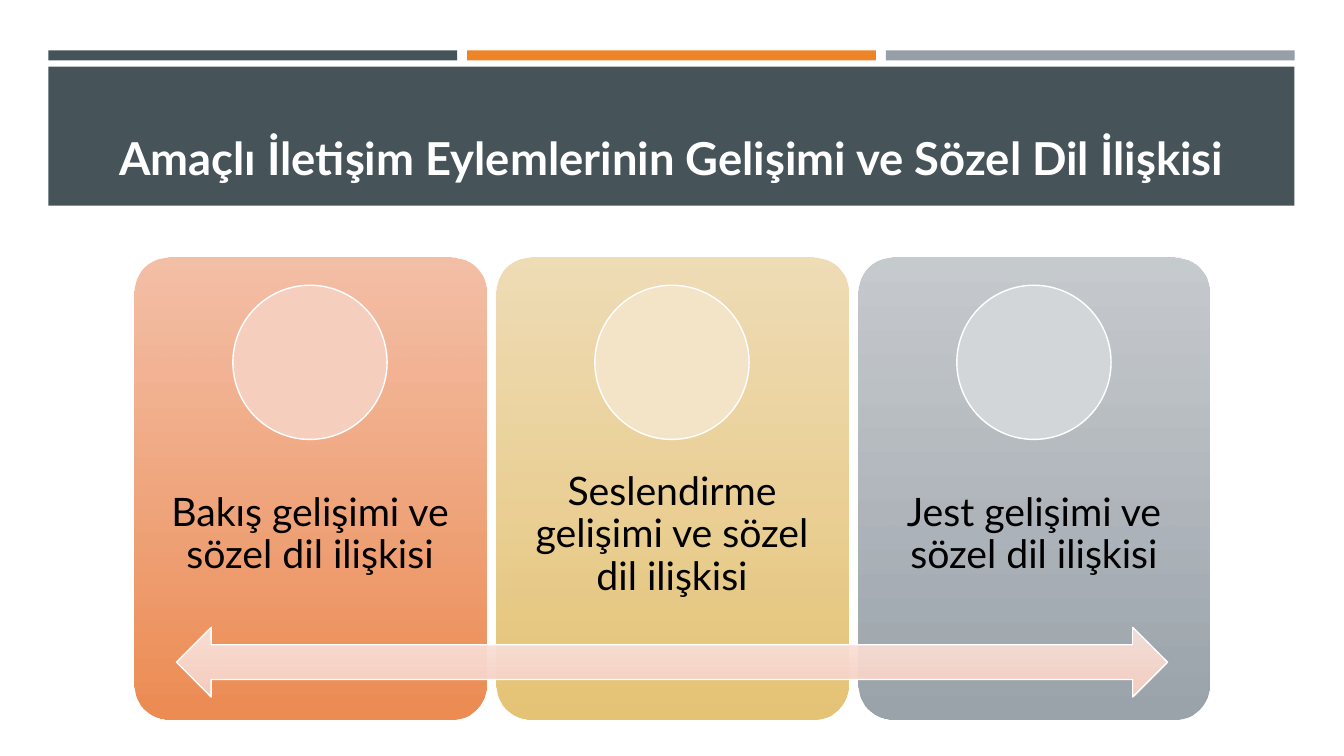
from pptx import Presentation
from pptx.dml.color import RGBColor
from pptx.enum.shapes import MSO_SHAPE
from pptx.enum.text import MSO_ANCHOR, MSO_AUTO_SIZE, PP_ALIGN
from pptx.oxml.ns import qn
from pptx.util import Inches, Pt
from lxml.etree import SubElement

PANELS = [
    ("Bakış gelişimi ve sözel dil ilişkisi", "F3B89D", "ED8C53", "F6CEBE"),
    ("Seslendirme gelişimi ve sözel dil ilişkisi", "EED9AE", "E6C476", "F3E4C8"),
    ("Jest gelişimi ve sözel dil ilişkisi", "C0C5C9", "9BA3AB", "D3D6D9"),
]


def color(hex_code):
    return RGBColor.from_string(hex_code)


def add_form(slide, kind, box, fill=None, line=None):
    form = slide.shapes.add_shape(kind, *map(Inches, box))
    form.shadow.inherit = False
    if fill:
        form.fill.solid()
        form.fill.fore_color.rgb = color(fill)
    if line:
        form.line.color.rgb = color(line)
        form.line.width = Pt(1)
    else:
        form.line.fill.background()
    return form


def shade(form, top, base):
    """Fill from top to base colour, with the top at 90% opacity."""
    form.fill.gradient()
    form.fill.gradient_angle = 270
    for stop, place, tone in zip(form.fill.gradient_stops, (0, 1), (top, base)):
        stop.position = place
        stop.color.rgb = color(tone)
    first = form.element.spPr.find(qn("a:gradFill")).find(".//" + qn("a:srgbClr"))
    SubElement(first, qn("a:alpha"), val="90000")


def put_text(frame, text, size, tone, bold=False, anchor=MSO_ANCHOR.MIDDLE,
             inset=None, spacing=None):
    frame.word_wrap = True
    frame.auto_size = MSO_AUTO_SIZE.NONE
    frame.vertical_anchor = anchor
    if inset is not None:
        frame.margin_left = frame.margin_right = Inches(inset)
        frame.margin_top = frame.margin_bottom = Inches(inset)
    para = frame.paragraphs[0]
    para.alignment = PP_ALIGN.CENTER
    if spacing:
        para.line_spacing = spacing
    run = para.add_run()
    run.text = text
    run.font.name = "Lato"
    run.font.size = Pt(size)
    run.font.bold = bold
    run.font.color.rgb = color(tone)


def add_header(slide, left, top, width):
    gap = 0.1
    part = (width - 2 * gap) / 3
    for i, tone in enumerate(("465359", "ED8428", "969FA7")):
        add_form(slide, MSO_SHAPE.RECTANGLE,
                 (left + i * (part + gap), top, part, 0.1), tone)
    add_form(slide, MSO_SHAPE.RECTANGLE, (left, top + 0.16, width, 1.38), "465359")

    title = slide.shapes.title
    title.element.getparent().append(title.element)  # bring in front of the band
    title.left, title.top = Inches(left + 0.15), Inches(top + 0.3)
    title.width, title.height = Inches(width - 0.3), Inches(1.08)
    put_text(title.text_frame,
             "Amaçlı İletişim Eylemlerinin Gelişimi ve Sözel Dil İlişkisi",
             32.4, "FFFFFF", bold=True, anchor=MSO_ANCHOR.BOTTOM)


def add_panel(slide, box, text, top_tone, base_tone, disc_tone):
    left, top, width, height = box
    card = add_form(slide, MSO_SHAPE.ROUNDED_RECTANGLE, box)
    card.adjustments[0] = 0.1
    shade(card, top_tone, base_tone)
    label = slide.shapes.add_textbox(*map(Inches, (
        left, top + 0.4 * height, width, 0.4 * height)))
    put_text(label.text_frame, text, 28, "000000", inset=0.22, spacing=0.9)
    disc = 1.53
    add_form(slide, MSO_SHAPE.OVAL,
             (left + (width - disc) / 2, top + 0.27, disc, disc),
             disc_tone, "FFFFFF")


def add_panels(slide, left, top, width, height):
    gap = 0.1
    part = (width - 2 * gap) / 3
    for i, panel in enumerate(PANELS):
        add_panel(slide, (left + i * (part + gap), top, part, height), *panel)
    arrow = add_form(slide, MSO_SHAPE.LEFT_RIGHT_ARROW,
                     (left + 0.42, top + 0.8 * height, width - 0.84, 0.69),
                     line="FFFFFF")
    shade(arrow, "FAE6DF", "F6CDBF")


def main():
    deck = Presentation()
    deck.slide_width, deck.slide_height = Inches(13.33), Inches(7.5)
    slide = deck.slides.add_slide(deck.slide_layouts[5])
    add_header(slide, 0.48, 0.5, 12.36)
    add_panels(slide, 1.33, 2.56, 10.67, 4.58)
    deck.save("out.pptx")


if __name__ == "__main__":
    main()
